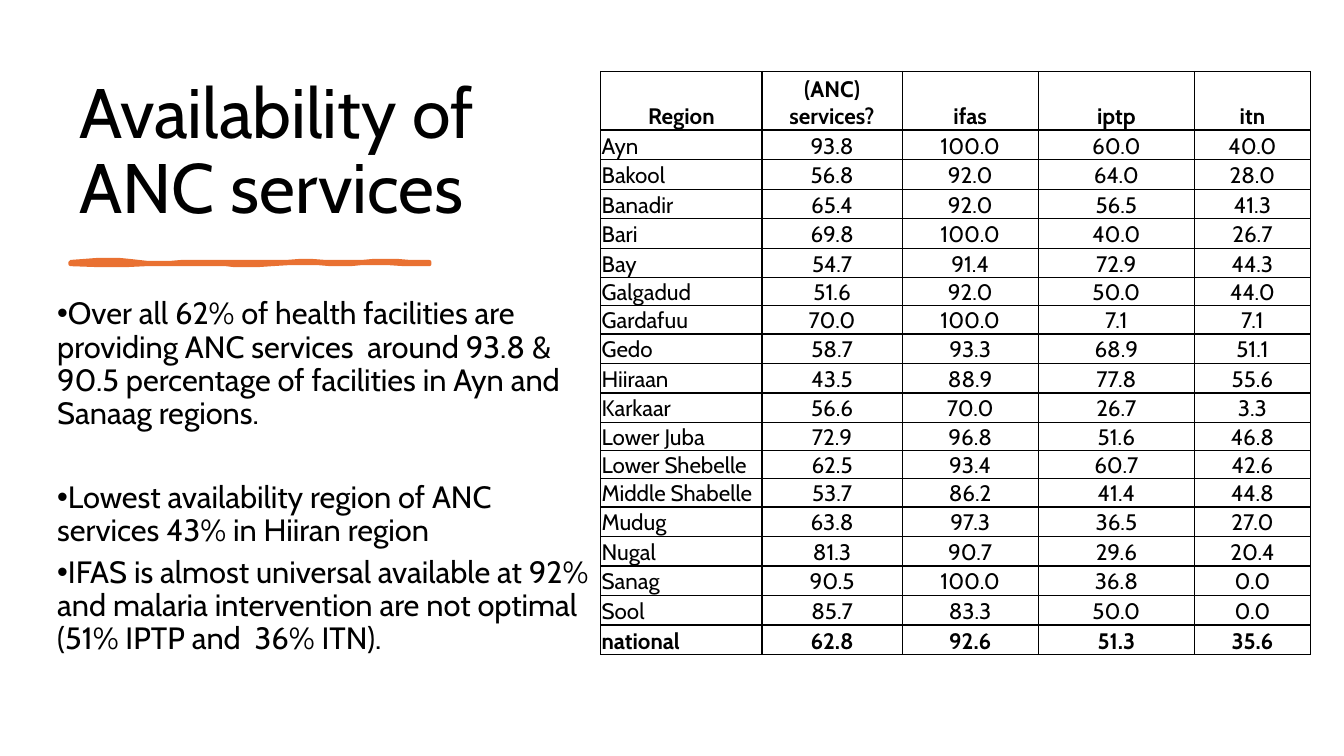
"""Builds the slide on the availability of ANC services by region."""
import pptx
import pptx.dml.color
import pptx.enum.text
import pptx.oxml
import pptx.oxml.ns
import pptx.util

Pt = pptx.util.Pt
ALIGN = pptx.enum.text.PP_ALIGN
ANCHOR = pptx.enum.text.MSO_ANCHOR
FONT, BLACK, ORANGE = "Cabin", "000000", "E97132"

TITLE = "Availability of ANC services"
POINTS = [
    ("Over all 62% of health facilities are providing ANC services  around "
     "93.8 & 90.5 percentage of facilities in Ayn and Sanaag regions.", 36),
    ("Lowest availability region of ANC services 43% in Hiiran region", 6),
    ("IFAS is almost universal available at 92% and malaria intervention "
     "are not optimal (51% IPTP and  36% ITN).", 6),
]
HEAD = ["Region", "(ANC) services?", "ifas", "iptp", "itn"]
RATES = [
    ("Ayn", 93.8, 100, 60, 40),
    ("Bakool", 56.8, 92, 64, 28),
    ("Banadir", 65.4, 92, 56.5, 41.3),
    ("Bari", 69.8, 100, 40, 26.7),
    ("Bay", 54.7, 91.4, 72.9, 44.3),
    ("Galgadud", 51.6, 92, 50, 44),
    ("Gardafuu", 70, 100, 7.1, 7.1),
    ("Gedo", 58.7, 93.3, 68.9, 51.1),
    ("Hiiraan", 43.5, 88.9, 77.8, 55.6),
    ("Karkaar", 56.6, 70, 26.7, 3.3),
    ("Lower Juba", 72.9, 96.8, 51.6, 46.8),
    ("Lower Shebelle", 62.5, 93.4, 60.7, 42.6),
    ("Middle Shabelle", 53.7, 86.2, 41.4, 44.8),
    ("Mudug", 63.8, 97.3, 36.5, 27),
    ("Nugal", 81.3, 90.7, 29.6, 20.4),
    ("Sanag", 90.5, 100, 36.8, 0),
    ("Sool", 85.7, 83.3, 50, 0),
    ("national", 62.8, 92.6, 51.3, 35.6),
]
WIDTHS = [115.2, 100.1, 97.2, 111.6, 82.8]
TIGHT = {"Galgadud", "Gardafuu", "Lower Juba", "Lower Shebelle", "Middle Shabelle"}
STROKE = [
    (27, -3, 51, -3, 68, 0), (85, 2, 107, 0, 139, 0), (171, -1, 190, 1, 214, 0),
    (238, -2, 269, 1, 289, 0), (309, -2, 342, 0, 356, 0), (356, 0, 356, 1, 356, 2),
    (338, 2, 294, 0, 278, 2), (262, 3, 234, -1, 200, 2), (165, 4, 161, 2, 129, 2),
    (96, 1, 62, 4, 0, 2),
]


def color(code):
    """Turn a hex string into a colour."""
    return pptx.dml.color.RGBColor.from_string(code)


def write(para, text, size, bold=False):
    """Add one run of text to a paragraph."""
    run = para.add_run()
    run.text = text
    run.font.name = FONT
    run.font.size = Pt(size)
    run.font.bold = bold
    run.font.color.rgb = color(BLACK)


def frame(slide, box):
    """Add a wrapping text box and return its text frame."""
    text = slide.shapes.add_textbox(*map(Pt, box)).text_frame
    text.word_wrap = True
    return text


def title(slide, box):
    """Set the title at the foot of its box."""
    text = frame(slide, box)
    text.vertical_anchor = ANCHOR.BOTTOM
    para = text.paragraphs[0]
    para.line_spacing = 0.9
    write(para, TITLE, 50)


def stroke(slide, left, top):
    """Draw the brush stroke below the title."""
    dots, last = [], (0, 0)
    for ax, ay, bx, by, cx, cy in STROKE:
        for step in range(1, 7):
            t = step / 6
            u = 1 - t
            dots.append(tuple(
                u**3 * p + 3 * u * u * t * a + 3 * u * t * t * b + t**3 * c
                for p, a, b, c in zip(last, (ax, ay), (bx, by), (cx, cy))))
        last = cx, cy
    pen = slide.shapes.build_freeform(0, 0, scale=Pt(0.72))
    pen.add_line_segments(dots, close=True)
    shape = pen.convert_to_shape(Pt(left), Pt(top))
    shape.shadow.inherit = False
    shape.fill.solid()
    shape.fill.fore_color.rgb = color(ORANGE)
    shape.line.color.rgb = color(ORANGE)
    shape.line.width = Pt(3)


def body(slide, box):
    """Write the bulleted findings."""
    text = frame(slide, box)
    for num, (words, gap) in enumerate(POINTS):
        para = text.add_paragraph() if num else text.paragraphs[0]
        para.line_spacing = 0.9
        para.space_after = Pt(gap)
        props = para._p.get_or_add_pPr()
        props.set("marL", "0")
        props.set("indent", str(-Pt(18)))
        ns = pptx.oxml.ns.nsdecls("a")
        props.append(pptx.oxml.parse_xml(f'<a:buFont {ns} typeface="Arial"/>'))
        props.append(pptx.oxml.parse_xml(f'<a:buChar {ns} char="•"/>'))
        write(para, words, 22)


def border(cell):
    """Rule all four sides of a cell in black."""
    props = cell._tc.get_or_add_tcPr()
    ns = pptx.oxml.ns.nsdecls("a")
    for spot, side in enumerate("LRTB"):
        props.insert(spot, pptx.oxml.parse_xml(
            f'<a:ln{side} {ns} w="{Pt(1)}"><a:solidFill>'
            f'<a:srgbClr val="{BLACK}"/></a:solidFill></a:ln{side}>'))


def table(slide, left, top):
    """Build the table of rates by region."""
    rows = [HEAD] + RATES
    highs = [41.8] + [20.1 if row[0] in TIGHT else 21.1 for row in RATES]
    size = map(Pt, (left, top, sum(WIDTHS), sum(highs)))
    grid = slide.shapes.add_table(len(rows), len(HEAD), *size).table
    grid.first_row = grid.horz_banding = False
    for col, wide in zip(grid.columns, WIDTHS):
        col.width = Pt(wide)
    for r, (row, high) in enumerate(zip(rows, highs)):
        grid.rows[r].height = Pt(high)
        for c, item in enumerate(row):
            cell = grid.cell(r, c)
            cell.fill.background()
            border(cell)
            cell.vertical_anchor = ANCHOR.BOTTOM
            cell.margin_left = cell.margin_right = cell.margin_top = Pt(0.7)
            cell.margin_bottom = 0
            para = cell.text_frame.paragraphs[0]
            para.alignment = ALIGN.CENTER if c or not r else ALIGN.LEFT
            text = item if isinstance(item, str) else f"{item:.1f}"
            write(para, text, 16, r in (0, len(RATES)))


def main():
    """Build and save the slide."""
    deck = pptx.Presentation()
    deck.slide_width, deck.slide_height = Pt(960), Pt(540)
    slide = deck.slides.add_slide(deck.slide_layouts[6])
    title(slide, (49.7, 50.4, 379.4, 116.6))
    stroke(slide, 50.4, 187.2)
    body(slide, (33.8, 209.5, 395.3, 279.4))
    table(slide, 429.1, 51.1)
    deck.save("out.pptx")


if __name__ == "__main__":
    main()
